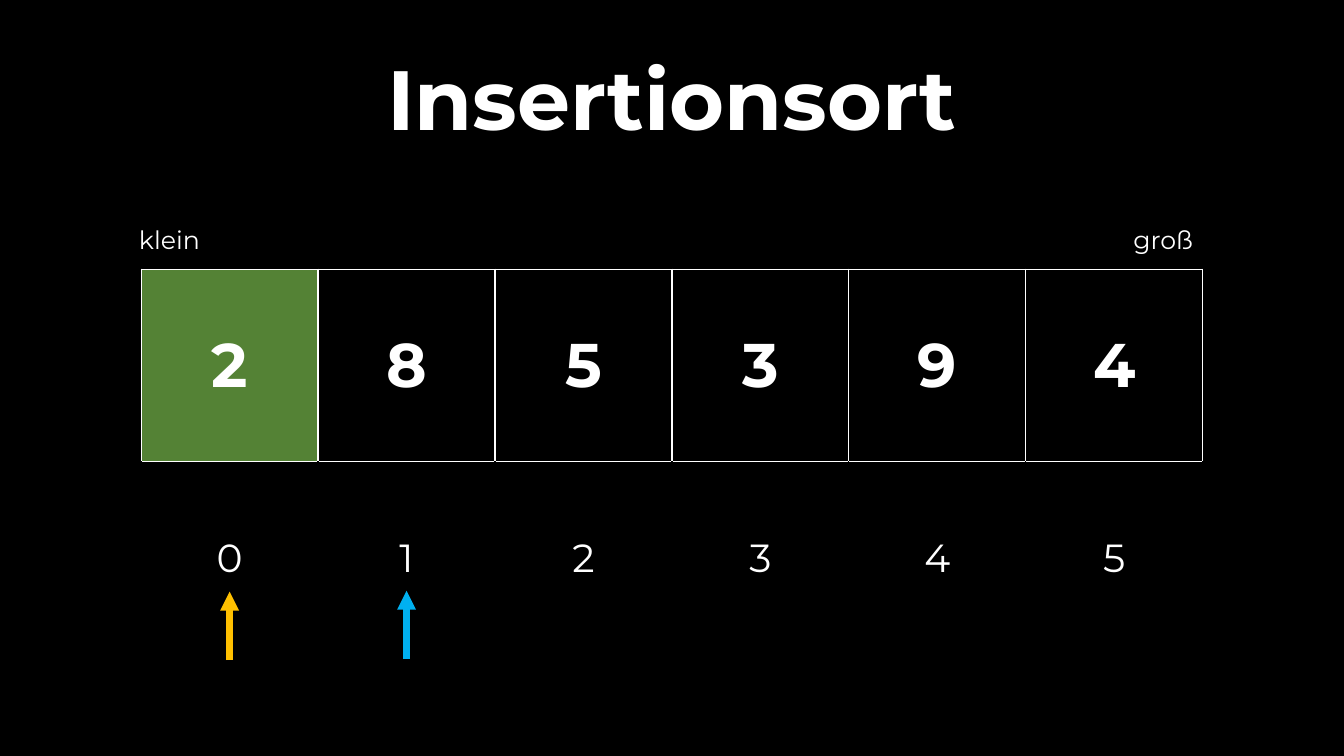
from lxml import etree
from pptx import Presentation
from pptx import util as u
from pptx.dml.color import RGBColor
from pptx.enum import shapes, text
from pptx.oxml.ns import qn

WHITE, BLACK, GREEN, YELLOW, BLUE = "FFFFFF", "000000", "548235", "FFC000", "00B0F0"
VALUES = [2, 8, 5, 3, 9, 4]
SORTED_COUNT = 1
LEFT, TOP, COLUMN, ROW = 1.4, 2.67, 1.755, 1.91


def paint(fill, color):
    fill.solid()
    fill.fore_color.rgb = RGBColor.from_string(color)


def write(frame, words, size, bold=False, align=text.PP_ALIGN.LEFT, spacing=None, before=None):
    frame.word_wrap = True
    paragraph = frame.paragraphs[0]
    paragraph.alignment = align
    paragraph.line_spacing = spacing
    paragraph.space_before = before
    run = paragraph.add_run()
    run.text = words
    run.font.name = "Montserrat"
    run.font.size = u.Pt(size)
    run.font.bold = bold
    paint(run.font.fill, WHITE)


deck = Presentation()
deck.slide_width, deck.slide_height = u.Inches(13.33), u.Inches(7.5)
slide = deck.slides.add_slide(deck.slide_layouts[6])
paint(slide.background.fill, BLACK)

array = slide.shapes.add_table(
    2, len(VALUES), u.Inches(LEFT), u.Inches(TOP),
    u.Inches(COLUMN * len(VALUES)), u.Inches(ROW * 2)).table
array.first_row = array.horz_banding = False

for index, value in enumerate(VALUES):
    value_fill = GREEN if index < SORTED_COUNT else BLACK
    for row, (words, size, bold, fill, edges) in enumerate([
        (value, 44, True, value_fill, [WHITE] * 4),
        (index, 28, False, BLACK, [BLACK, BLACK, WHITE, BLACK]),
    ]):
        cell = array.cell(row, index)
        cell.vertical_anchor = text.MSO_ANCHOR.MIDDLE
        write(cell.text_frame, str(words), size, bold, text.PP_ALIGN.CENTER)
        paint(cell.fill, fill)
        properties = cell._tc.get_or_add_tcPr()
        for place, (side, color) in enumerate(zip("LRTB", edges)):
            edge = etree.Element(qn(f"a:ln{side}"), w=str(u.Pt(1)))
            solid = etree.SubElement(edge, qn("a:solidFill"))
            etree.SubElement(solid, qn("a:srgbClr"), val=color)
            properties.insert(place, edge)

for words, left, top, width, height, anchor, style in [
    ("groß", 10.42, 2.18, 1.51, 0.4, text.MSO_ANCHOR.TOP,
     dict(size=18, align=text.PP_ALIGN.RIGHT)),
    ("klein", 1.28, 2.18, 1.51, 0.4, text.MSO_ANCHOR.TOP, dict(size=18)),
    ("Insertionsort", 0.15, 0.31, 13.03, 1.42, text.MSO_ANCHOR.MIDDLE,
     dict(size=60, bold=True, align=text.PP_ALIGN.CENTER, spacing=0.9, before=u.Pt(10))),
]:
    label = slide.shapes.add_textbox(*map(u.Inches, (left, top, width, height))).text_frame
    label.vertical_anchor = anchor
    write(label, words, **style)

for index, color, tip in [(1, BLUE, 5.86), (0, YELLOW, 5.87)]:
    center = u.Inches(LEFT + COLUMN * (index + 0.5))
    pointer = slide.shapes.add_connector(
        shapes.MSO_CONNECTOR.STRAIGHT, center, u.Inches(tip + 0.68), center, u.Inches(tip))
    pointer.line.width = u.Pt(4.5)
    paint(pointer.line.fill, color)
    etree.SubElement(pointer.line._get_or_add_ln(), qn("a:tailEnd"), type="triangle")
    etree.SubElement(pointer._element.spPr, qn("a:effectLst"))

deck.save("out.pptx")
